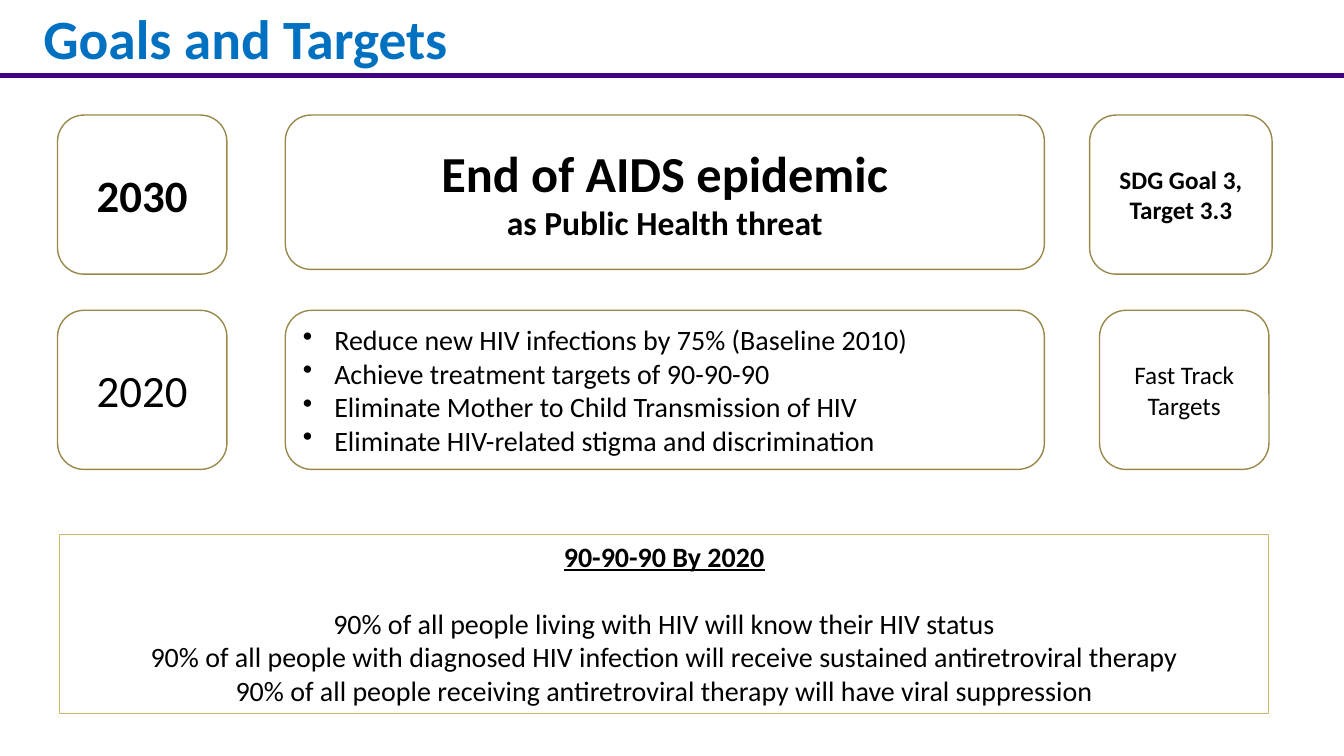
import pptx
import pptx.util
import pptx.dml.color
import pptx.enum.shapes
import pptx.enum.text
import lxml.etree

Cm, Pt = pptx.util.Cm, pptx.util.Pt
RGBColor = pptx.dml.color.RGBColor
Shape = pptx.enum.shapes.MSO_SHAPE
Align = pptx.enum.text.PP_ALIGN
Anchor = pptx.enum.text.MSO_ANCHOR
Fit = pptx.enum.text.MSO_AUTO_SIZE

BLUE = RGBColor(0x00, 0x70, 0xC0)
PURPLE = RGBColor(0x41, 0x00, 0x82)
OLIVE = RGBColor(0x98, 0x89, 0x4B)
GOLD = RGBColor(0xCE, 0xB9, 0x66)
BLACK = RGBColor(0, 0, 0)
A = "http://schemas.openxmlformats.org/drawingml/2006/main"


def style(para, size, bold, color=BLACK, align=Align.CENTER):
    para.alignment = align
    font = para.font
    font.name, font.size, font.bold = "Calibri", Pt(size), bold
    font.color.rgb = color


def add_box(kind, place, color, width, lines):
    """Add an outlined box; each line is (text, size, bold)."""
    box = slide.shapes.add_shape(kind, *[Cm(n) for n in place])
    box.shadow.inherit = False
    box.fill.background()
    box.line.color.rgb = color
    box.line.width = Pt(width)
    frame = box.text_frame
    frame.word_wrap = True
    frame.vertical_anchor = Anchor.MIDDLE
    frame.text = "\n".join(line[0] for line in lines)
    for para, (text, size, bold) in zip(frame.paragraphs, lines):
        style(para, size, bold)
    return box


deck = pptx.Presentation()
deck.slide_width, deck.slide_height = Cm(33.87), Cm(19.05)
slide = deck.slides.add_slide(deck.slide_layouts[5])

# Title
title = slide.shapes.title
title.left, title.top = Cm(0.84), Cm(0.2)
title.width, title.height = Cm(32.74), Cm(1.47)
title.text_frame.text = "Goals and Targets"
title.text_frame.auto_size = Fit.NONE
title.text_frame.vertical_anchor = Anchor.MIDDLE
style(title.text_frame.paragraphs[0], 39.6, True, BLUE, Align.LEFT)

# Rule below the title
rule = slide.shapes.add_connector(
    pptx.enum.shapes.MSO_CONNECTOR.STRAIGHT, 0, Cm(1.9), deck.slide_width, Cm(1.9))
rule.line.color.rgb = PURPLE
rule.line.width = Pt(3)
lxml.etree.SubElement(rule.line._get_or_add_ln().getparent(), f"{{{A}}}effectLst")

# Goals by year: year, goal, source
ROW1, ROW2, HIGH = 2.9, 7.82, 4.01
YEAR, GOAL = 1.45, 7.19
SIDE, WIDE = 4.27, 19.13
targets = [
    "Reduce new HIV infections by 75% (Baseline 2010)",
    "Achieve treatment targets of 90-90-90",
    "Eliminate Mother to Child Transmission of HIV",
    "Eliminate HIV-related stigma and discrimination",
]
cells = [
    ((YEAR, ROW1, SIDE, HIGH), [("2030", 32, True)]),
    ((GOAL, ROW1, WIDE, 3.89), [("End of AIDS epidemic", 36, True),
                                ("as Public Health threat", 24, True)]),
    ((27.46, ROW1, 4.6, HIGH), [("SDG Goal 3, Target 3.3", 18, True)]),
    ((YEAR, ROW2, SIDE, HIGH), [("2020", 32, False)]),
    ((27.71, ROW2, SIDE, HIGH), [("Fast Track Targets", 18, False)]),
]
for place, lines in cells:
    add_box(Shape.ROUNDED_RECTANGLE, place, OLIVE, 1, lines)

# Bulleted targets for 2020
goals = add_box(Shape.ROUNDED_RECTANGLE, (GOAL, ROW2, WIDE, HIGH), OLIVE, 1,
                [(text, 20, False) for text in targets])
for para in goals.text_frame.paragraphs:
    para.alignment = Align.LEFT
    props = para._p.get_or_add_pPr()
    props.set("marL", str(Cm(0.79)))
    props.set("indent", str(-Cm(0.79)))
    mark = lxml.etree.Element(f"{{{A}}}buChar", char="•")
    props.insert_element_before(mark, "a:tabLst", "a:defRPr", "a:extLst")

# Summary of the 90-90-90 targets
facts = add_box(Shape.RECTANGLE, (1.5, 13.46, 30.48, 4.52), GOLD, 0.75, [
    ("90-90-90 By 2020", 20, True),
    ("90% of all people living with HIV will know their HIV status", 20, False),
    ("90% of all people with diagnosed HIV infection will receive sustained"
     " antiretroviral therapy", 20, False),
    ("90% of all people receiving antiretroviral therapy will have viral suppression",
     20, False),
])
facts.text_frame.vertical_anchor = Anchor.TOP
head = facts.text_frame.paragraphs[0]
head.font.underline = True
head.space_after = Pt(24)

deck.save("out.pptx")
